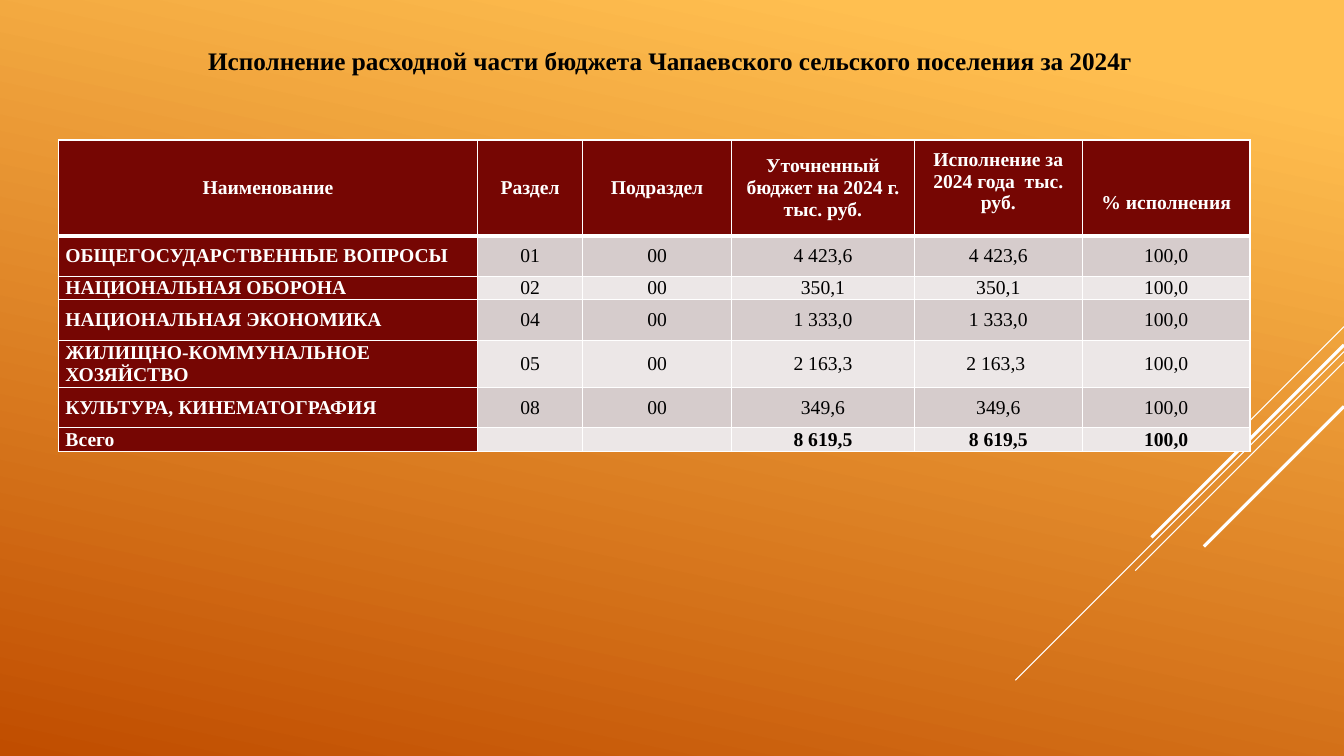
from dataclasses import dataclass

from lxml.etree import SubElement
from pptx import Presentation
from pptx.dml.color import RGBColor as Rgb
from pptx.enum.text import MSO_ANCHOR as Anchor, PP_ALIGN as Align
from pptx.enum.shapes import MSO_CONNECTOR as Connector
from pptx.oxml.ns import qn
from pptx.util import Cm, Pt


@dataclass(frozen=True)
class Theme:
    font: str = "Times New Roman"
    title_size: int = 18
    table_size: int = 14
    white: str = "FFFFFF"
    black: str = "000000"
    maroon: str = "760603"
    band_dark: str = "D6CCCC"
    band_light: str = "ECE7E7"
    glow: str = "FFBF50"
    ember: str = "C04D00"
    border: float = 1
    header_border: float = 3


@dataclass(frozen=True)
class Ray:
    """A 45-degree line from the right edge, lengths in cm."""
    top: float
    run: float
    weight: float


@dataclass(frozen=True)
class Column:
    heading: str
    width: float
    anchor: Anchor = Anchor.MIDDLE
    heading_gap: float = 0


@dataclass(frozen=True)
class Row:
    height: float
    values: tuple[str, ...]
    bold: bool = False


THEME = Theme()
SLIDE_WIDTH, SLIDE_HEIGHT = 33.87, 19.05
TITLE = "Исполнение расходной части бюджета Чапаевского сельского поселения за 2024г"

RAYS = (
    Ray(8.23, 2.54, 0.75),
    Ray(8.86, 8.28, 0.75),
    Ray(9.12, 5.26, 0.75),
    Ray(8.69, 4.85, 2.25),
    Ray(10.24, 3.53, 2.25),
)
COLUMNS = (
    Column("Наименование", 10.57),
    Column("Раздел", 2.64),
    Column("Подраздел", 3.76),
    Column("Уточненный бюджет на 2024 г. тыс. руб.", 4.6),
    Column("Исполнение за 2024 года  тыс. руб.", 4.24, Anchor.BOTTOM, 0.55),
    Column("% исполнения", 4.22, Anchor.BOTTOM, 0.55),
)
HEADER_HEIGHT = 2.41
ROWS = (
    Row(1.02, ("ОБЩЕГОСУДАРСТВЕННЫЕ ВОПРОСЫ", "01", "00", "4 423,6", "4 423,6", "100,0")),
    Row(0.53, ("НАЦИОНАЛЬНАЯ ОБОРОНА", "02", "00", "350,1", "350,1", "100,0")),
    Row(1.02, ("НАЦИОНАЛЬНАЯ ЭКОНОМИКА", "04", "00", "1 333,0", "1 333,0", "100,0")),
    Row(1.07, ("ЖИЛИЩНО-КОММУНАЛЬНОЕ ХОЗЯЙСТВО", "05", "00", "2 163,3", "2 163,3 ", "100,0")),
    Row(1.02, ("КУЛЬТУРА, КИНЕМАТОГРАФИЯ", "08", "00", "349,6", "349,6", "100,0")),
    Row(0.53, ("Всего", "", "", "8 619,5", "8 619,5", "100,0"), bold=True),
)


def add_span(para, text: str, size: int, color: str, bold: bool) -> None:
    span = para.add_run()
    span.text = text
    span.font.name = THEME.font
    span.font.size = Pt(size)
    span.font.bold = bold
    span.font.color.rgb = Rgb.from_string(color)


def paint_background(page) -> None:
    fill = page.background.fill
    fill.gradient()
    fill.gradient_angle = 258
    stops = ((0.1, THEME.glow), (1, THEME.ember))
    for stop, (position, color) in zip(fill.gradient_stops, stops):
        stop.position = position
        stop.color.rgb = Rgb.from_string(color)


def draw_ray(page, ray: Ray) -> None:
    line = page.shapes.add_connector(
        Connector.STRAIGHT, Cm(SLIDE_WIDTH), Cm(ray.top),
        Cm(SLIDE_WIDTH - ray.run), Cm(ray.top + ray.run))
    line.line.color.rgb = Rgb.from_string(THEME.white)
    line.line.width = Pt(ray.weight)
    SubElement(line._element.spPr, qn("a:effectLst"))


def draw_title(page) -> None:
    box = page.shapes.add_textbox(Cm(0.81), Cm(0.2), Cm(32.16), Cm(3.33))
    frame = box.text_frame
    frame.word_wrap = True
    frame.margin_top = Cm(0.94)
    para = frame.paragraphs[0]
    para.alignment = Align.CENTER
    add_span(para, TITLE, THEME.title_size, THEME.black, True)


def set_borders(cell, top: float, bottom: float) -> None:
    properties = cell._tc.get_or_add_tcPr()
    sides = (("L", THEME.border), ("R", THEME.border), ("T", top), ("B", bottom))
    for side, weight in sides:
        edge = SubElement(properties, qn(f"a:ln{side}"), w=str(Pt(weight)))
        fill = SubElement(edge, qn("a:solidFill"))
        SubElement(fill, qn("a:srgbClr"), val=THEME.white)


def fill_cell(cell, text: str, fill: str, color: str, bold: bool, align: Align,
              anchor: Anchor = Anchor.MIDDLE, gap: float = 0,
              top: float = THEME.border, bottom: float = THEME.border) -> None:
    set_borders(cell, top, bottom)
    cell.fill.solid()
    cell.fill.fore_color.rgb = Rgb.from_string(fill)
    cell.margin_left = cell.margin_right = Cm(0.18)
    cell.margin_top, cell.margin_bottom = 0, Cm(gap)
    cell.vertical_anchor = anchor
    para = cell.text_frame.paragraphs[0]
    para.alignment = align
    if text:
        add_span(para, text, THEME.table_size, color, bold)
    else:
        # Keeps an empty cell from stretching its row
        SubElement(para._p, qn("a:endParaRPr"), sz=str(THEME.table_size * 100))


def draw_table(page) -> None:
    heights = (HEADER_HEIGHT, *(row.height for row in ROWS))
    table = page.shapes.add_table(
        len(heights), len(COLUMNS), Cm(1.47), Cm(3.53),
        Cm(sum(column.width for column in COLUMNS)), Cm(sum(heights))).table
    for table_row, height in zip(table.rows, heights):
        table_row.height = Cm(height)

    # Header row
    for index, column in enumerate(COLUMNS):
        table.columns[index].width = Cm(column.width)
        fill_cell(table.cell(0, index), column.heading, THEME.maroon, THEME.white,
                  True, Align.CENTER, column.anchor, column.heading_gap,
                  bottom=THEME.header_border)

    # Banded body with a maroon name column
    for number, row in enumerate(ROWS, start=1):
        band = THEME.band_dark if number % 2 else THEME.band_light
        top = THEME.header_border if number == 1 else THEME.border
        for index, value in enumerate(row.values):
            cell = table.cell(number, index)
            if index == 0:
                fill_cell(cell, value, THEME.maroon, THEME.white, True,
                          Align.JUSTIFY, top=top)
            else:
                fill_cell(cell, value, band, THEME.black, row.bold,
                          Align.CENTER, top=top)


def main() -> None:
    deck = Presentation()
    deck.slide_width, deck.slide_height = Cm(SLIDE_WIDTH), Cm(SLIDE_HEIGHT)
    page = deck.slides.add_slide(deck.slide_layouts[6])
    paint_background(page)
    for ray in RAYS:
        draw_ray(page, ray)
    draw_title(page)
    draw_table(page)
    deck.save("out.pptx")


if __name__ == "__main__":
    main()
